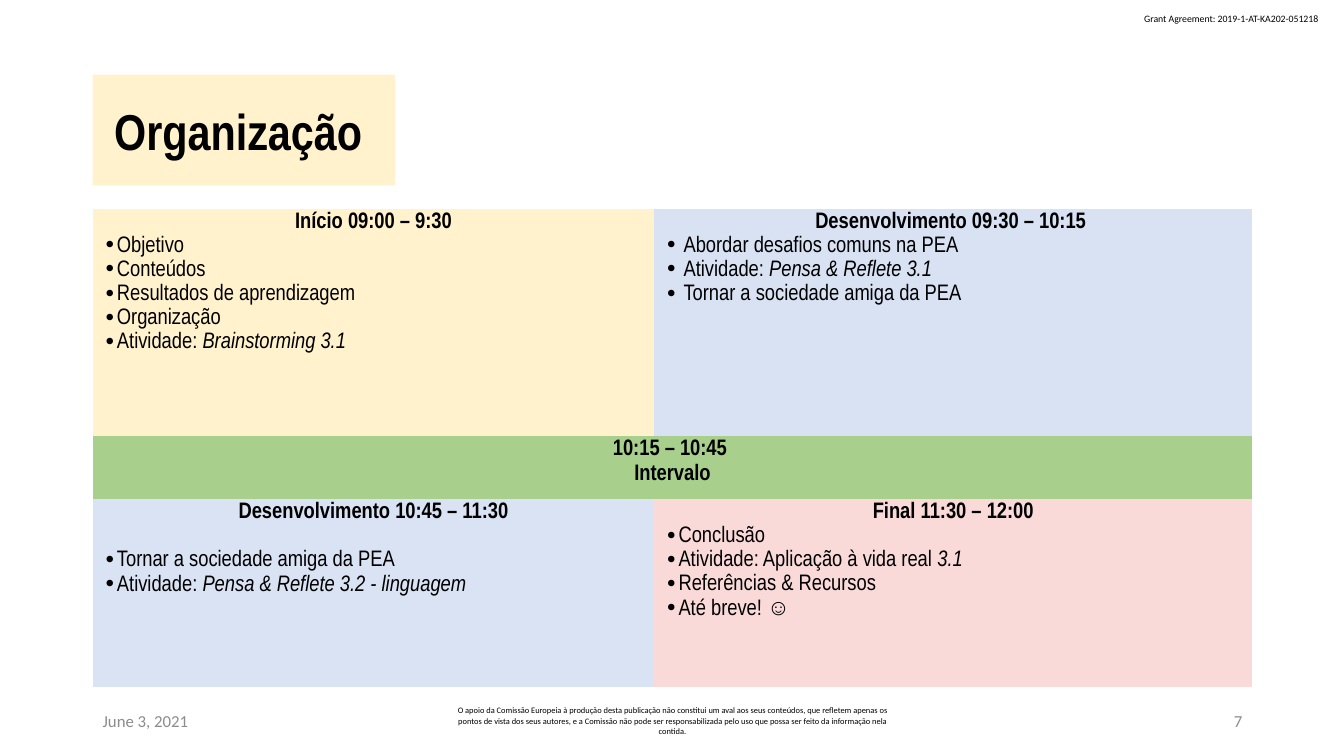
from dataclasses import dataclass

from lxml import etree
from pptx import Presentation
from pptx.dml.color import RGBColor
from pptx.enum.shapes import MSO_SHAPE
from pptx.enum.text import MSO_ANCHOR, PP_ALIGN
from pptx.oxml.ns import qn
from pptx.util import Inches, Pt

LEFT, CENTER, RIGHT, JUSTIFY = PP_ALIGN.LEFT, PP_ALIGN.CENTER, PP_ALIGN.RIGHT, PP_ALIGN.JUSTIFY
TOP, MIDDLE = MSO_ANCHOR.TOP, MSO_ANCHOR.MIDDLE
RECTANGLE = MSO_SHAPE.RECTANGLE
NO_STYLE_NO_GRID = "{2D5ABB26-0587-4C30-8999-92F81FD0307C}"


@dataclass(frozen=True)
class Theme:
    ink: str = "000000"
    muted: str = "8C8C8C"
    cream: str = "FFF2CC"
    blue: str = "D8E2F3"
    pale_blue: str = "DAE3F3"
    green: str = "A8D08C"
    rose: str = "F9DAD9"
    heading_font: str = "Arial Narrow"
    small_font: str = "Calibri"
    title_size: float = 36
    body_size: float = 16
    footer_size: float = 12
    grant_size: float = 7
    support_size: float = 6


THEME = Theme()

COLUMN_WIDTHS = (5.57, 5.93)
ROW_HEIGHTS = (2.26, 0.62, 1.87)
BLANK_LINE = 17.4

SESSIONS = {
    (0, 0): dict(
        fill=THEME.cream, headings=["Início 09:00 – 9:30"],
        topics=["Objetivo", "Conteúdos", "Resultados de aprendizagem", "Organização",
                "Atividade: |Brainstorming 3.1"]),
    (0, 1): dict(
        fill=THEME.blue, headings=["Desenvolvimento 09:30 – 10:15 "], align=JUSTIFY, indent=0.19,
        topics=["Abordar desafios comuns na PEA", "Atividade: |Pensa & Reflete 3.1 ",
                "Tornar a sociedade amiga da PEA"]),
    (1, 0): dict(fill=THEME.green, headings=["10:15 – 10:45 ", "Intervalo"]),
    (2, 0): dict(
        fill=THEME.pale_blue, headings=["Desenvolvimento 10:45 – 11:30"], align=JUSTIFY,
        gap=BLANK_LINE,
        topics=["Tornar a sociedade amiga da PEA",
                "Atividade: |Pensa & Reflete 3.2 - linguagem"]),
    (2, 1): dict(
        fill=THEME.rose, headings=["Final 11:30 – 12:00"],
        topics=["Conclusão", "Atividade: Aplicação à vida real |3.1",
                "Referências & Recursos", "Até breve! ☺"]),
}

SUPPORT_NOTE = (
    "O apoio da Comissão Europeia à produção desta publicação não constitui um aval aos seus "
    "conteúdos, que refletem apenas os pontos de vista dos seus autores, e a Comissão não pode "
    "ser responsabilizada pelo uso que possa ser feito da informação nela contida."
)


def add_bullet(paragraph, indent):
    properties = paragraph._p.get_or_add_pPr()
    properties.set("marL", str(Inches(indent)))
    properties.set("indent", str(-Inches(indent)))
    bullet_color = etree.SubElement(properties, qn("a:buClr"))
    etree.SubElement(bullet_color, qn("a:srgbClr"), val=THEME.ink)
    etree.SubElement(properties, qn("a:buChar"), char="∙")


def write(paragraph, text, size, font=THEME.small_font, color=THEME.ink, bold=False,
          align=LEFT, spacing=None, before=None, bullet_indent=None):
    if bullet_indent:
        add_bullet(paragraph, bullet_indent)
    paragraph.alignment = align
    if spacing:
        paragraph.line_spacing = spacing
    if before:
        paragraph.space_before = Pt(before)
    for position, part in enumerate(text.split("|")):
        run = paragraph.add_run()
        run.text = part
        run.font.name = font
        run.font.size = Pt(size)
        run.font.bold = bold
        run.font.italic = position == 1
        run.font.color.rgb = RGBColor.from_string(color)


def add_label(slide, box, text, size, anchor=MIDDLE, wrap=True, **text_format):
    frame = slide.shapes.add_textbox(*map(Inches, box)).text_frame
    frame.word_wrap = wrap
    frame.vertical_anchor = anchor
    write(frame.paragraphs[0], text, size, **text_format)


def add_title(slide, box):
    banner = slide.shapes.add_shape(RECTANGLE, *map(Inches, box))
    banner.shadow.inherit = False
    banner.fill.solid()
    banner.fill.fore_color.rgb = RGBColor.from_string(THEME.cream)
    banner.line.fill.background()
    frame = banner.text_frame
    frame.word_wrap = True
    frame.vertical_anchor = MIDDLE
    frame.margin_left = frame.margin_right = Inches(0.13)
    frame.margin_top = frame.margin_bottom = Inches(0.07)
    write(frame.paragraphs[0], "Organização ", THEME.title_size,
          font=THEME.heading_font, bold=True, align=CENTER)


def fill_session(cell, fill, headings, topics=(), align=LEFT, indent=0.14, gap=None):
    cell.fill.solid()
    cell.fill.fore_color.rgb = RGBColor.from_string(fill)
    cell.margin_left = cell.margin_right = Inches(0.1)
    cell.margin_top = cell.margin_bottom = 0
    cell.vertical_anchor = TOP
    frame = cell.text_frame
    shared = dict(size=THEME.body_size, font=THEME.heading_font, spacing=1.15)
    for position, heading in enumerate(headings):
        paragraph = frame.add_paragraph() if position else frame.paragraphs[0]
        write(paragraph, heading, bold=True, align=CENTER, **shared)
    for position, topic in enumerate(topics):
        write(frame.add_paragraph(), topic, align=align, bullet_indent=indent,
              before=None if position else gap, **shared)


def add_schedule(slide, box):
    schedule = slide.shapes.add_table(
        len(ROW_HEIGHTS), len(COLUMN_WIDTHS), *map(Inches, box)).table
    schedule.first_row = schedule.horz_banding = False
    schedule._tbl.tblPr.find(qn("a:tableStyleId")).text = NO_STYLE_NO_GRID
    for column, width in zip(schedule.columns, COLUMN_WIDTHS):
        column.width = Inches(width)
    for row, height in zip(schedule.rows, ROW_HEIGHTS):
        row.height = Inches(height)
    schedule.cell(1, 0).merge(schedule.cell(1, 1))
    for (row, column), session in SESSIONS.items():
        fill_session(schedule.cell(row, column), **session)


def add_footer(slide, box):
    left, top, width, height = box
    side, middle = 3, 4.5
    add_label(slide, (left, top, side, height), "June 3, 2021", THEME.footer_size,
              color=THEME.muted)
    add_label(slide, (left + (width - middle) / 2, top, middle, height), SUPPORT_NOTE,
              THEME.support_size, align=CENTER)
    add_label(slide, (left + width - side, top, side, height), "7", THEME.footer_size,
              color=THEME.muted, align=RIGHT)


def main():
    deck = Presentation()
    deck.slide_width, deck.slide_height = Inches(13.33), Inches(7.5)
    slide = deck.slides.add_slide(deck.slide_layouts[6])
    left, width = 0.92, 11.5
    add_label(slide, (11.25, 0.08, 1.97, 0.22), "Grant Agreement: 2019-1-AT-KA202-051218",
              THEME.grant_size, anchor=TOP, wrap=False)
    add_footer(slide, (left, 6.95, width, 0.4))
    add_title(slide, (left, 0.74, 3, 1.1))
    add_schedule(slide, (left, 2.07, width, sum(ROW_HEIGHTS)))
    deck.save("out.pptx")


if __name__ == "__main__":
    main()
